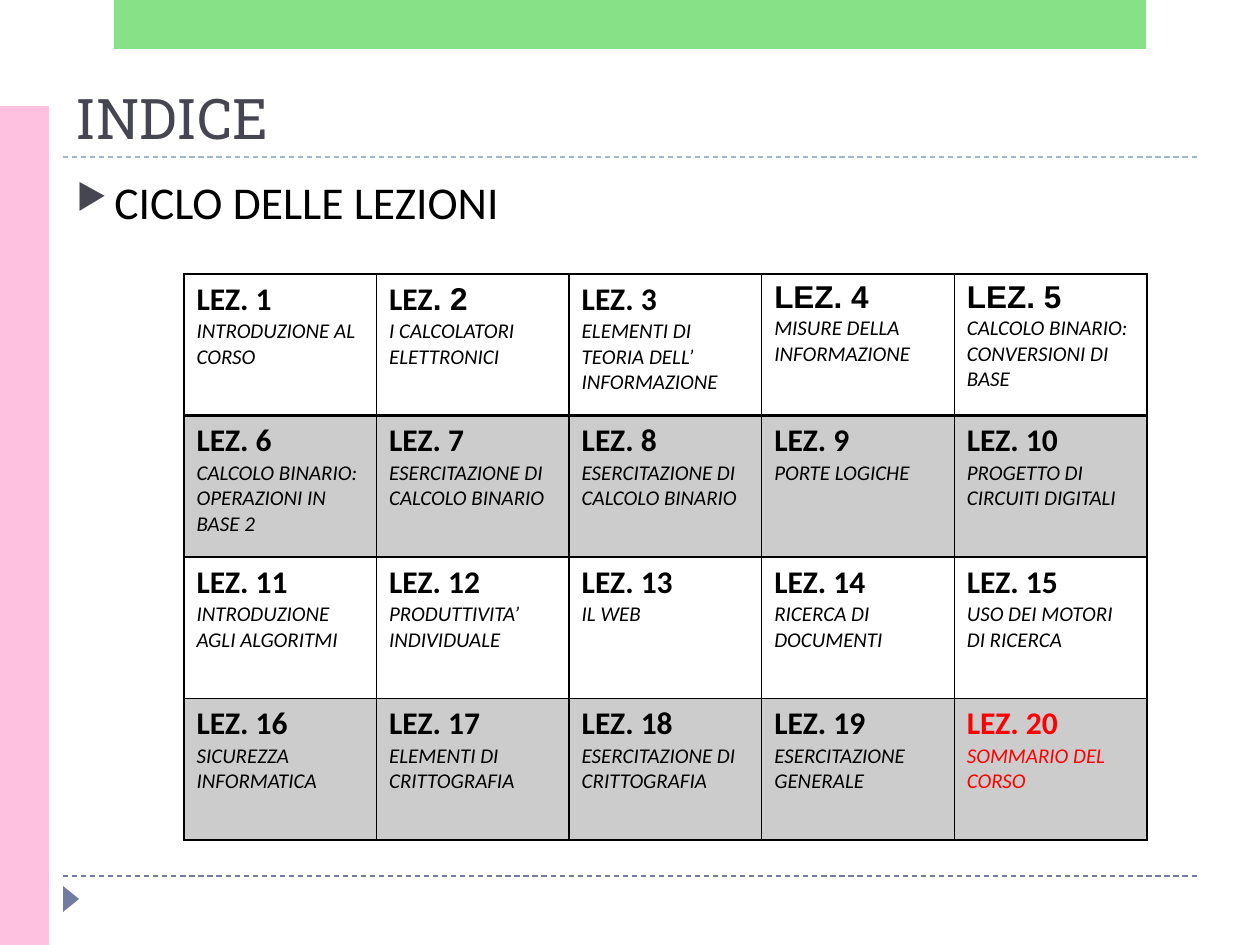
"""Build the index slide with the grid of twenty lessons."""
import copy
import dataclasses
import typing

import lxml.etree
import pptx
import pptx.dml.color
import pptx.enum.dml
import pptx.enum.shapes
import pptx.enum.text
import pptx.oxml.ns
import pptx.util

EMU_PER_PX = 914400 / 126
COLUMNS, ROWS = 5, 4
COLORS = {
    "ink": "000000",
    "alert": "FF0000",
    "heading": "464653",
    "footer": "727CA3",
    "rule": "9FB8CD",
    "pink": "FFC1E0",
    "green": "62D862",
}


@dataclasses.dataclass
class Band:
    kind: pptx.enum.shapes.MSO_SHAPE
    box: tuple[int, int, int, int]
    color: str
    opacity: int = 100
    rotation: int = 0


@dataclasses.dataclass
class Rule:
    y: int
    color: str


@dataclasses.dataclass
class Lesson:
    topic: str
    word_font: str = "Calibri"
    number_font: str = "Calibri"
    color: str = "ink"


BANDS = [
    Band(pptx.enum.shapes.MSO_SHAPE.ISOSCELES_TRIANGLE, (58, 891, 26, 16), "footer", rotation=90),
    Band(pptx.enum.shapes.MSO_SHAPE.RECTANGLE, (0, 106, 49, 839), "pink"),
    Band(pptx.enum.shapes.MSO_SHAPE.RECTANGLE, (114, 0, 1032, 49), "green", opacity=76),
]
RULES = [Rule(876, "footer"), Rule(157, "rule")]
LESSONS = [
    Lesson("INTRODUZIONE AL CORSO"),
    Lesson("I CALCOLATORI \vELETTRONICI", number_font="Arial"),
    Lesson("ELEMENTI DI TEORIA DELL’\vINFORMAZIONE"),
    Lesson("MISURE DELLA INFORMAZIONE", "Arial", "Arial"),
    Lesson("CALCOLO BINARIO: CONVERSIONI DI BASE", "Arial", "Arial"),
    Lesson("CALCOLO BINARIO: OPERAZIONI IN BASE 2"),
    Lesson("ESERCITAZIONE DI CALCOLO BINARIO"),
    Lesson("ESERCITAZIONE DI CALCOLO BINARIO"),
    Lesson("PORTE LOGICHE"),
    Lesson("PROGETTO DI CIRCUITI DIGITALI"),
    Lesson("INTRODUZIONE AGLI ALGORITMI"),
    Lesson("PRODUTTIVITA’ INDIVIDUALE"),
    Lesson("IL WEB"),
    Lesson("RICERCA DI DOCUMENTI"),
    Lesson("USO DEI MOTORI DI RICERCA"),
    Lesson("SICUREZZA INFORMATICA"),
    Lesson("ELEMENTI DI CRITTOGRAFIA"),
    Lesson("ESERCITAZIONE DI CRITTOGRAFIA"),
    Lesson("ESERCITAZIONE GENERALE"),
    Lesson("SOMMARIO DEL CORSO", color="alert"),
]


def px(length: int) -> pptx.util.Emu:
    return pptx.util.Emu(round(length * EMU_PER_PX))


def rgb(color: str) -> pptx.dml.color.RGBColor:
    return pptx.dml.color.RGBColor.from_string(COLORS[color])


def add_element(parent: typing.Any, tag: str, **attributes: str) -> typing.Any:
    return lxml.etree.SubElement(parent, pptx.oxml.ns.qn(tag), attributes)


def paint(fill: typing.Any, properties: typing.Any, color: str, opacity: int) -> None:
    fill.solid()
    fill.fore_color.rgb = rgb(color)
    if opacity < 100:
        solid = properties.find(pptx.oxml.ns.qn("a:solidFill"))
        add_element(solid[0], "a:alpha", val=str(opacity * 1000))


def style(run: typing.Any, size: int, font: str, color: str,
          bold: bool = False, italic: bool = False) -> None:
    run.font.size = pptx.util.Pt(size)
    run.font.name = font
    run.font.color.rgb = rgb(color)
    run.font.bold = bold
    run.font.italic = italic


def draw_band(slide: typing.Any, band: Band) -> None:
    shape = slide.shapes.add_shape(band.kind, *map(px, band.box))
    shape.shadow.inherit = False
    shape.rotation = band.rotation
    paint(shape.fill, shape._element.spPr, band.color, band.opacity)
    shape.line.fill.background()


def draw_rule(slide: typing.Any, rule: Rule) -> None:
    line = slide.shapes.add_connector(
        pptx.enum.shapes.MSO_CONNECTOR.STRAIGHT, px(63), px(rule.y), px(1197), px(rule.y))
    line.line.color.rgb = rgb(rule.color)
    line.line.width = pptx.util.Pt(0.75)
    line.line.dash_style = pptx.enum.dml.MSO_LINE.DASH
    add_element(line._element.spPr, "a:effectLst")


def draw_text(slide: typing.Any, box: tuple[int, int, int, int], text: str, size: int,
              font: str, color: str, anchor: pptx.enum.text.MSO_ANCHOR) -> typing.Any:
    frame = slide.shapes.add_textbox(*map(px, box)).text_frame
    frame.word_wrap = True
    frame.vertical_anchor = anchor
    frame.text = text
    style(frame.paragraphs[0].runs[0], size, font, color)
    return frame.paragraphs[0]


def add_bullet(paragraph: typing.Any) -> None:
    properties = paragraph._p.get_or_add_pPr()
    properties.set("marL", str(px(38)))
    properties.set("indent", str(-px(38)))
    add_element(add_element(properties, "a:buClr"), "a:srgbClr", val=COLORS["heading"])
    add_element(properties, "a:buSzPct", val="76000")
    add_element(properties, "a:buChar", char="▶")


def add_borders(cell: typing.Any, row: int) -> None:
    properties = cell._tc.get_or_add_tcPr()
    for side in "LRTB":
        points = 2 if (row, side) in {(0, "B"), (1, "T")} else 1
        border = add_element(properties, f"a:ln{side}", w=str(pptx.util.Pt(points)))
        add_element(add_element(border, "a:solidFill"), "a:srgbClr", val=COLORS["ink"])


def fill_lesson(cell: typing.Any, number: int, lesson: Lesson) -> None:
    heading = cell.text_frame.paragraphs[0]
    for text, font in (("LEZ", lesson.word_font), (f". {number}", lesson.number_font)):
        run = heading.add_run()
        run.text = text
        style(run, 18, font, lesson.color, bold=True)
    topic = cell.text_frame.add_paragraph()
    topic.text = lesson.topic
    for run in topic.runs:
        style(run, 12, "Calibri", lesson.color, italic=True)
    for line_break in topic._p.findall(pptx.oxml.ns.qn("a:br")):
        line_break.insert(0, copy.deepcopy(topic.runs[0]._r.rPr))


def draw_lessons(slide: typing.Any) -> None:
    table = slide.shapes.add_table(ROWS, COLUMNS, px(184), px(274), px(963), px(566)).table
    table.first_row = False
    table.horz_banding = False
    for index, lesson in enumerate(LESSONS):
        row, column = divmod(index, COLUMNS)
        cell = table.cell(row, column)
        add_borders(cell, row)
        if row % 2:
            paint(cell.fill, cell._tc.get_or_add_tcPr(), "ink", 20)
        else:
            cell.fill.background()
        fill_lesson(cell, index + 1, lesson)


def main() -> None:
    deck = pptx.Presentation()
    deck.slide_width, deck.slide_height = px(1260), px(945)
    slide = deck.slides.add_slide(deck.slide_layouts[6])
    for rule in RULES:
        draw_rule(slide, rule)
    for band in BANDS:
        draw_band(slide, band)
    draw_text(slide, (63, 69, 1134, 88), "INDICE", 32, "Roboto Slab", "heading",
              pptx.enum.text.MSO_ANCHOR.BOTTOM)
    subtitle = draw_text(slide, (64, 168, 1134, 97), "CICLO DELLE LEZIONI", 26, "Calibri", "ink",
                         pptx.enum.text.MSO_ANCHOR.TOP)
    add_bullet(subtitle)
    draw_lessons(slide)
    deck.save("out.pptx")


if __name__ == "__main__":
    main()
